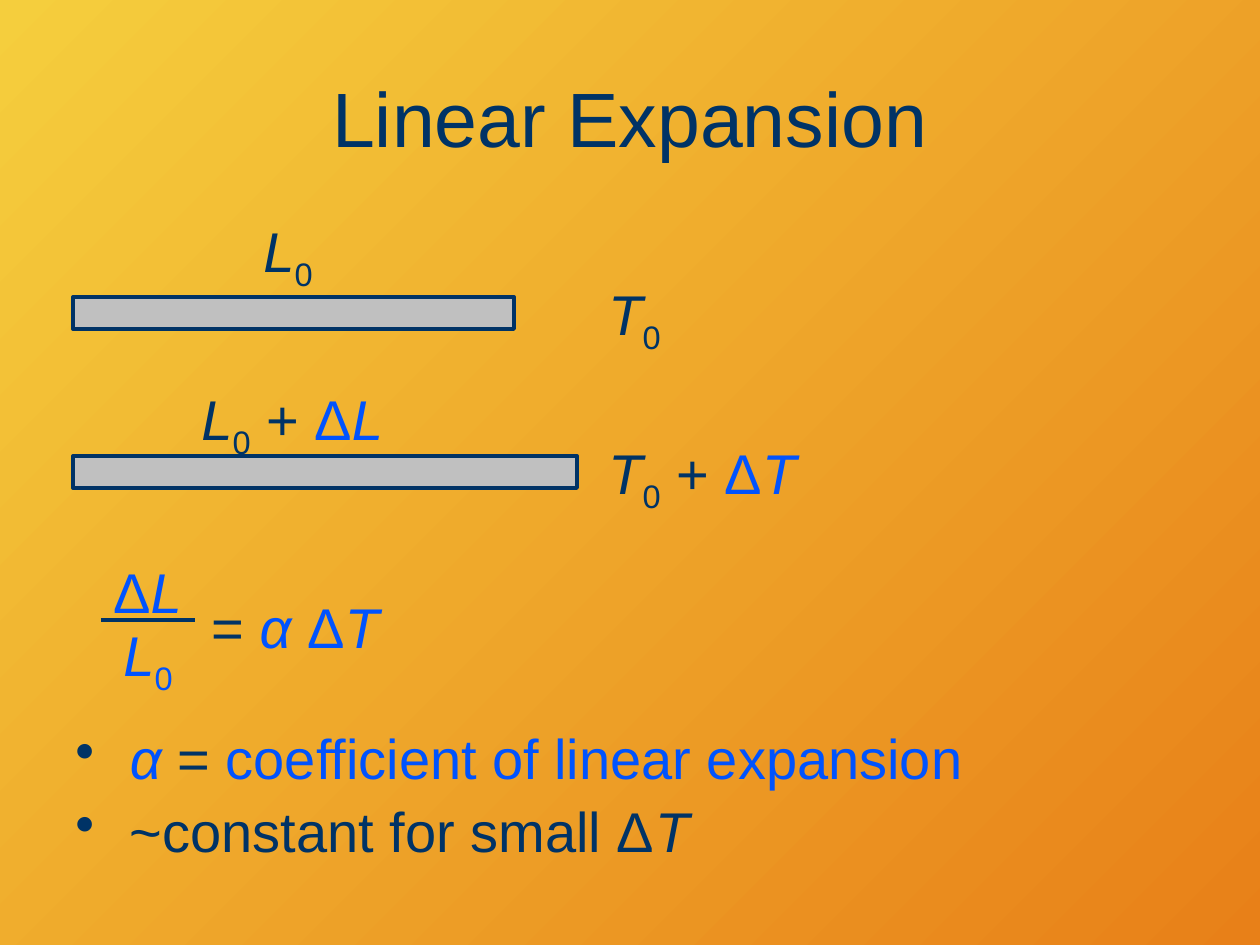
"""Build a slide on linear expansion: two heated bars, the formula and its coefficient."""
from lxml import etree
from pptx import Presentation
from pptx.dml.color import RGBColor
from pptx.enum.shapes import MSO_CONNECTOR, MSO_SHAPE
from pptx.enum.text import MSO_ANCHOR, MSO_AUTO_SIZE, PP_ALIGN
from pptx.oxml.ns import qn
from pptx.util import Pt

PX = 914400 / 126
NAVY = RGBColor(0x00, 0x33, 0x66)
BLUE = RGBColor(0x00, 0x53, 0xFE)
GRAY = RGBColor(0xC0, 0xC0, 0xC0)
YELLOW = RGBColor(0xF5, 0xCE, 0x3D)
ORANGE = RGBColor(0xE8, 0x80, 0x18)
LEFT, CENTER = PP_ALIGN.LEFT, PP_ALIGN.CENTER
TOP, MIDDLE = MSO_ANCHOR.TOP, MSO_ANCHOR.MIDDLE
GROW, FIXED = MSO_AUTO_SIZE.SHAPE_TO_FIT_TEXT, MSO_AUTO_SIZE.NONE
RECTANGLE, STRAIGHT = MSO_SHAPE.RECTANGLE, MSO_CONNECTOR.STRAIGHT
PLAIN, ITALIC, SUBSCRIPT = "plain", "italic", "subscript"


def scale(*lengths):
    return [round(length * PX) for length in lengths]


def add_text(shapes, box, paragraphs, size=32, align=LEFT, anchor=TOP, fit=GROW, bullet=False):
    frame = shapes.add_textbox(*scale(*box)).text_frame
    frame.word_wrap = True
    frame.auto_size = fit
    frame.vertical_anchor = anchor
    for index, runs in enumerate(paragraphs):
        paragraph = frame.add_paragraph() if index else frame.paragraphs[0]
        paragraph.alignment = align
        if bullet:
            paragraph.line_spacing = 0.9
            paragraph.space_before = Pt(7)
            indent, = scale(39)
            properties = paragraph._p.get_or_add_pPr()
            properties.set("marL", str(indent))
            properties.set("indent", str(-indent))
            etree.SubElement(properties, qn("a:buChar")).set("char", "•")
        for text, color, style in runs:
            run = paragraph.add_run()
            run.text = text
            run.font.name = "Arial"
            run.font.size = Pt(size)
            run.font.color.rgb = color
            run.font.italic = style == ITALIC
            if style == SUBSCRIPT:
                run._r.get_or_add_rPr().set("baseline", "-25000")


presentation = Presentation()
presentation.slide_width, presentation.slide_height = scale(1260, 945)
slide = presentation.slides.add_slide(presentation.slide_layouts[6])

background = slide.background.fill
background.gradient()
background.gradient_angle = 315
for stop, color in zip(background.gradient_stops, (YELLOW, ORANGE)):
    stop.color.rgb = color

add_text(slide.shapes, (63, 38, 1134, 157), [[("Linear Expansion", NAVY, PLAIN)]],
         size=44, align=CENTER, anchor=MIDDLE, fit=FIXED)

coefficient = [(" ", NAVY, PLAIN), ("α", BLUE, ITALIC), (" = ", NAVY, PLAIN),
               ("coefficient of linear expansion", BLUE, PLAIN)]
constant = [(" ~constant for small Δ", NAVY, PLAIN), ("T", NAVY, ITALIC)]
add_text(slide.shapes, (63, 725, 1134, 157), [coefficient, constant], fit=FIXED, bullet=True)

BARS = [
    ((73, 297, 441, 32), (251, 210, 86, 79), (596, 273, 86, 79), False),
    ((73, 456, 504, 32), (189, 378, 210, 79), (596, 432, 231, 79), True),
]
for bar_box, length_box, temperature_box, heated in BARS:
    shapes = slide.shapes.add_group_shape().shapes
    bar = shapes.add_shape(RECTANGLE, *scale(*bar_box))
    bar.shadow.inherit = False
    bar.fill.solid()
    bar.fill.fore_color.rgb = GRAY
    bar.line.color.rgb = NAVY
    bar.line.width = Pt(2.25)
    for symbol, box in (("L", length_box), ("T", temperature_box)):
        runs = [(symbol, NAVY, ITALIC), ("0", NAVY, SUBSCRIPT)]
        if heated:
            runs += [(" + ", NAVY, PLAIN), ("Δ", BLUE, PLAIN), (symbol, BLUE, ITALIC)]
        add_text(shapes, box, [runs])

formula = slide.shapes.add_group_shape().shapes
add_text(formula, (105, 614, 86, 79), [[("L", BLUE, ITALIC), ("0", BLUE, SUBSCRIPT)]], align=CENTER)
add_text(formula, (94, 551, 107, 79), [[("Δ", BLUE, PLAIN), ("L", BLUE, ITALIC)]], align=CENTER)
add_text(formula, (199, 586, 210, 79),
         [[("= ", NAVY, PLAIN), ("α ", BLUE, ITALIC), ("Δ", BLUE, PLAIN), ("T", BLUE, ITALIC)]])
fraction_line = formula.add_connector(STRAIGHT, *scale(101, 620, 195, 620))
fraction_line.line.color.rgb = NAVY
fraction_line.line.width = Pt(2.25)
etree.SubElement(fraction_line._element.spPr, qn("a:effectLst"))

presentation.save("out.pptx")
